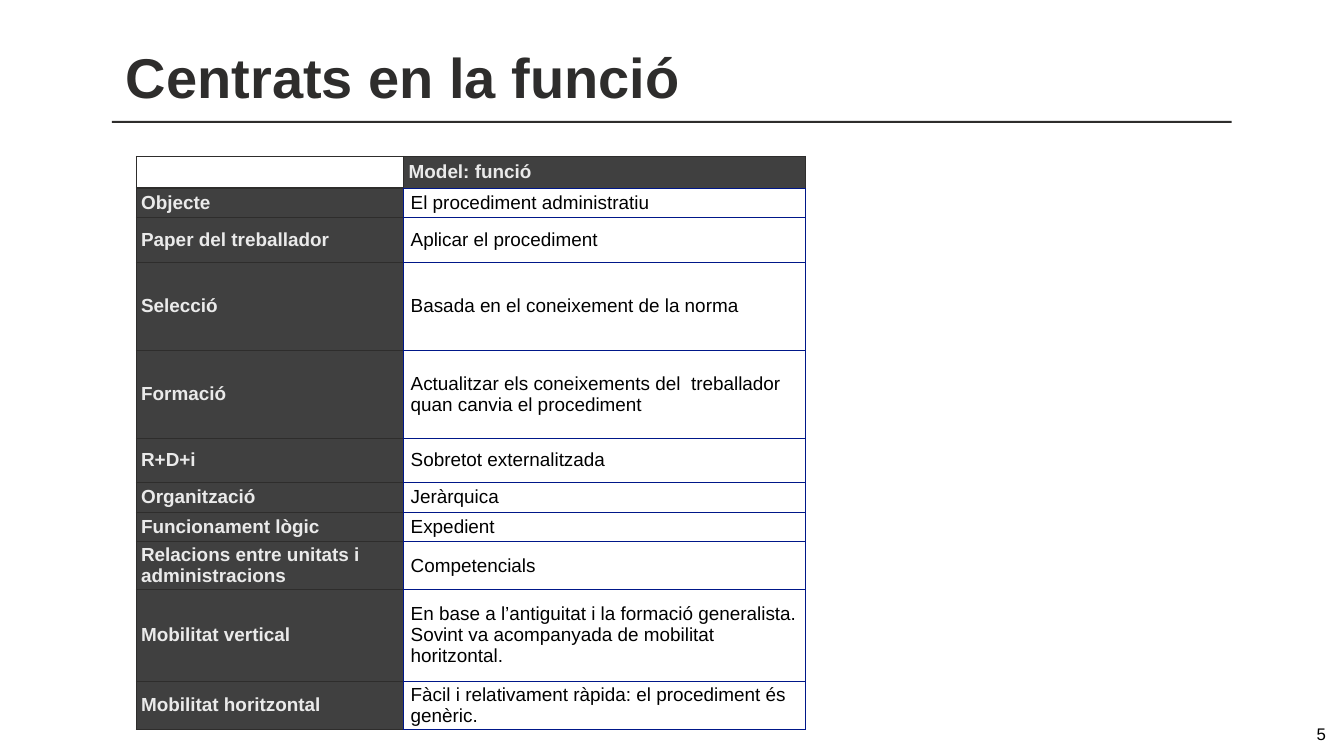
"""Build the slide on the function-centred model with its comparison table."""
from lxml.etree import SubElement
from pptx import Presentation
from pptx.dml.color import RGBColor
from pptx.enum.shapes import MSO_SHAPE
from pptx.enum.text import MSO_ANCHOR, PP_ALIGN
from pptx.oxml.ns import qn
from pptx.util import Inches, Pt

FONT = "Arial"
INK, BLUE, DARK, PALE, BLACK = "2E2D2C", "001789", "404040", "EAEAEA", "000000"
TITLE = "Centrats en la funció"
PAGE_NUMBER = "5"
COLUMN_WIDTHS = (5.31, 7.98)
ROWS = [
    ("", "Model: funció", 0.63),
    ("Objecte", "El procediment administratiu", 0.58),
    ("Paper del treballador", "Aplicar el procediment", 0.9),
    ("Selecció", "Basada en el coneixement de la norma", 1.74),
    ("Formació", "Actualitzar els coneixements del  treballador quan canvia el procediment", 1.74),
    ("R+D+i", "Sobretot externalitzada", 0.89),
    ("Organització", "Jeràrquica", 0.58),
    ("Funcionament lògic", "Expedient", 0.58),
    ("Relacions entre unitats i administracions", "Competencials", 0.96),
    ("Mobilitat vertical", "En base a l’antiguitat i la formació generalista. "
     "Sovint va acompanyada de mobilitat horitzontal.", 1.81),
    ("Mobilitat horitzontal", "Fàcil i relativament ràpida: el procediment és genèric.", 0.97),
]


def color(value):
    return RGBColor.from_string(value)


def format_runs(text_frame, size, value, bold):
    for paragraph in text_frame.paragraphs:
        for run in paragraph.runs:
            run.font.name = FONT
            run.font.size = Pt(size)
            run.font.bold = bold
            run.font.color.rgb = color(value)


def add_text(slide, box, text, size, value, bold, anchor, align, insets):
    shape = slide.shapes.add_textbox(*map(Inches, box))
    text_frame = shape.text_frame
    text_frame.word_wrap = True
    text_frame.vertical_anchor = anchor
    text_frame.margin_left = text_frame.margin_right = Inches(insets[0])
    text_frame.margin_top = text_frame.margin_bottom = Inches(insets[1])
    text_frame.text = text
    text_frame.paragraphs[0].alignment = align
    format_runs(text_frame, size, value, bold)


def set_borders(cell, borders):
    properties = cell._tc.get_or_add_tcPr()
    for side, (value, width) in zip("LRTB", borders):
        line = SubElement(properties, qn(f"a:ln{side}"), w=str(Pt(width)))
        fill = SubElement(line, qn("a:solidFill"))
        SubElement(fill, qn("a:srgbClr"), val=value)


def cell_borders(row, column):
    dark, blue = (INK, 1), (BLUE, 1)
    if row == 0:
        return (dark, dark, dark, blue if column else (INK, 3))
    if column:
        return (blue,) * 4
    return (dark, blue, (INK, 3) if row == 1 else dark, dark)


def format_cell(cell, row, column, text):
    heading = row == 0 or column == 0
    set_borders(cell, cell_borders(row, column))
    if heading and text:
        cell.fill.solid()
        cell.fill.fore_color.rgb = color(DARK)
    else:
        cell.fill.background()
    cell.vertical_anchor = MSO_ANCHOR.MIDDLE
    cell.margin_left = cell.margin_right = Inches(0.1 if heading else 0.14)
    cell.margin_top = cell.margin_bottom = 0
    cell.text_frame.text = text
    format_runs(cell.text_frame, 27, PALE if heading else BLACK, heading)


def add_model_table(slide):
    heights = [height for _, _, height in ROWS]
    box = (2.7, 3.1, sum(COLUMN_WIDTHS), sum(heights))
    table = slide.shapes.add_table(len(ROWS), len(COLUMN_WIDTHS), *map(Inches, box)).table
    table.first_row = table.horz_banding = False
    for column, width in zip(table.columns, COLUMN_WIDTHS):
        column.width = Inches(width)
    for row, (label, description, height) in enumerate(ROWS):
        table.rows[row].height = Inches(height)
        for column, text in enumerate((label, description)):
            format_cell(table.cell(row, column), row, column, text)


def main():
    presentation = Presentation()
    presentation.slide_width = Inches(26.67)
    presentation.slide_height = Inches(15)
    slide = presentation.slides.add_slide(presentation.slide_layouts[6])

    rule = slide.shapes.add_shape(MSO_SHAPE.RECTANGLE, *map(Inches, (2.22, 2.4, 22.22, 0.04)))
    rule.shadow.inherit = False
    rule.fill.solid()
    rule.fill.fore_color.rgb = color(INK)
    rule.line.fill.background()

    add_text(slide, (23.41, 14.35, 3, 0.4), PAGE_NUMBER, 24, BLACK, False,
             MSO_ANCHOR.MIDDLE, PP_ALIGN.RIGHT, (0.1, 0.1))
    add_text(slide, (2.23, 0.73, 22.22, 1.57), TITLE, 80, INK, True,
             MSO_ANCHOR.BOTTOM, PP_ALIGN.LEFT, (0.27, 0.13))
    add_model_table(slide)
    presentation.save("out.pptx")


if __name__ == "__main__":
    main()
